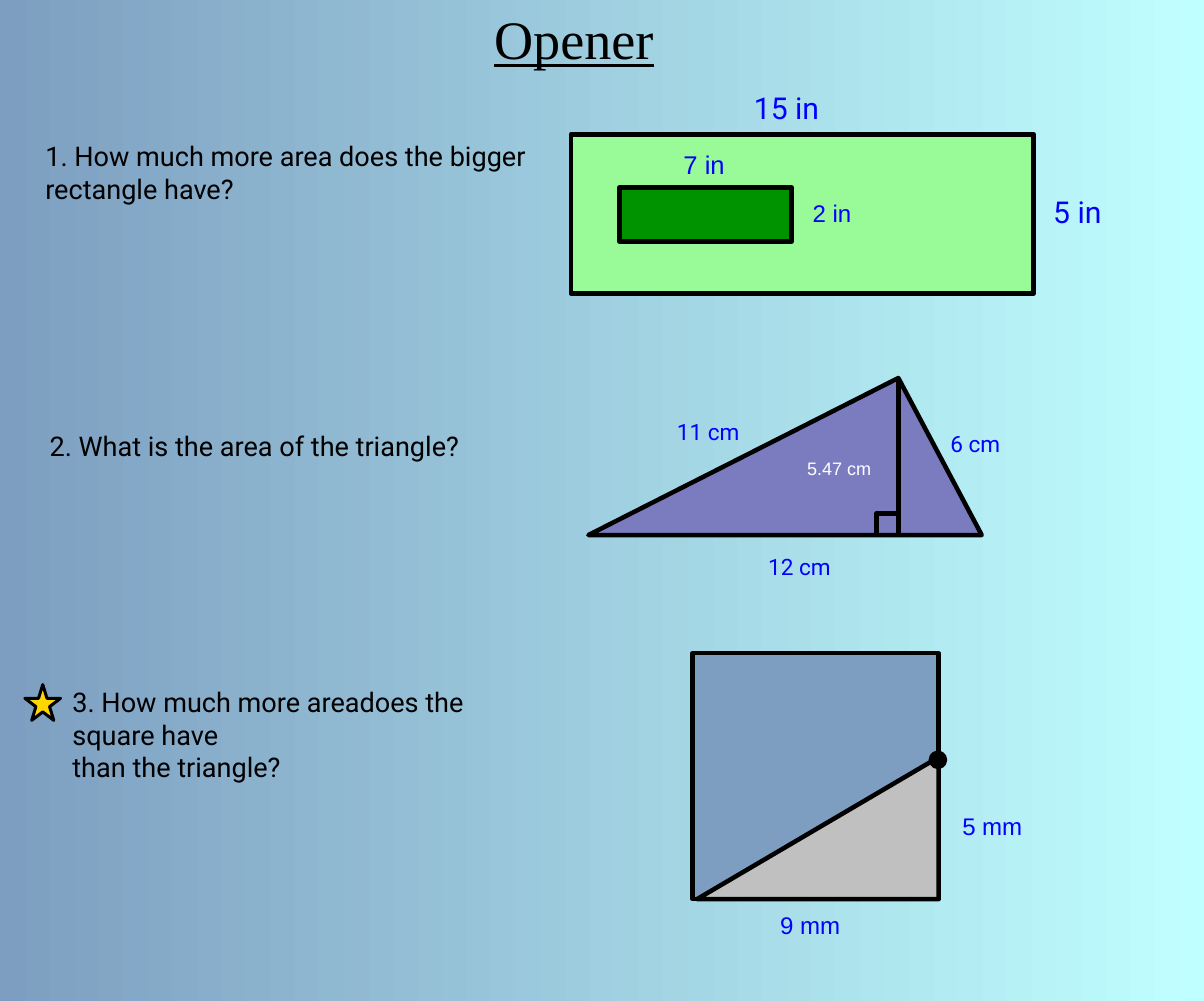
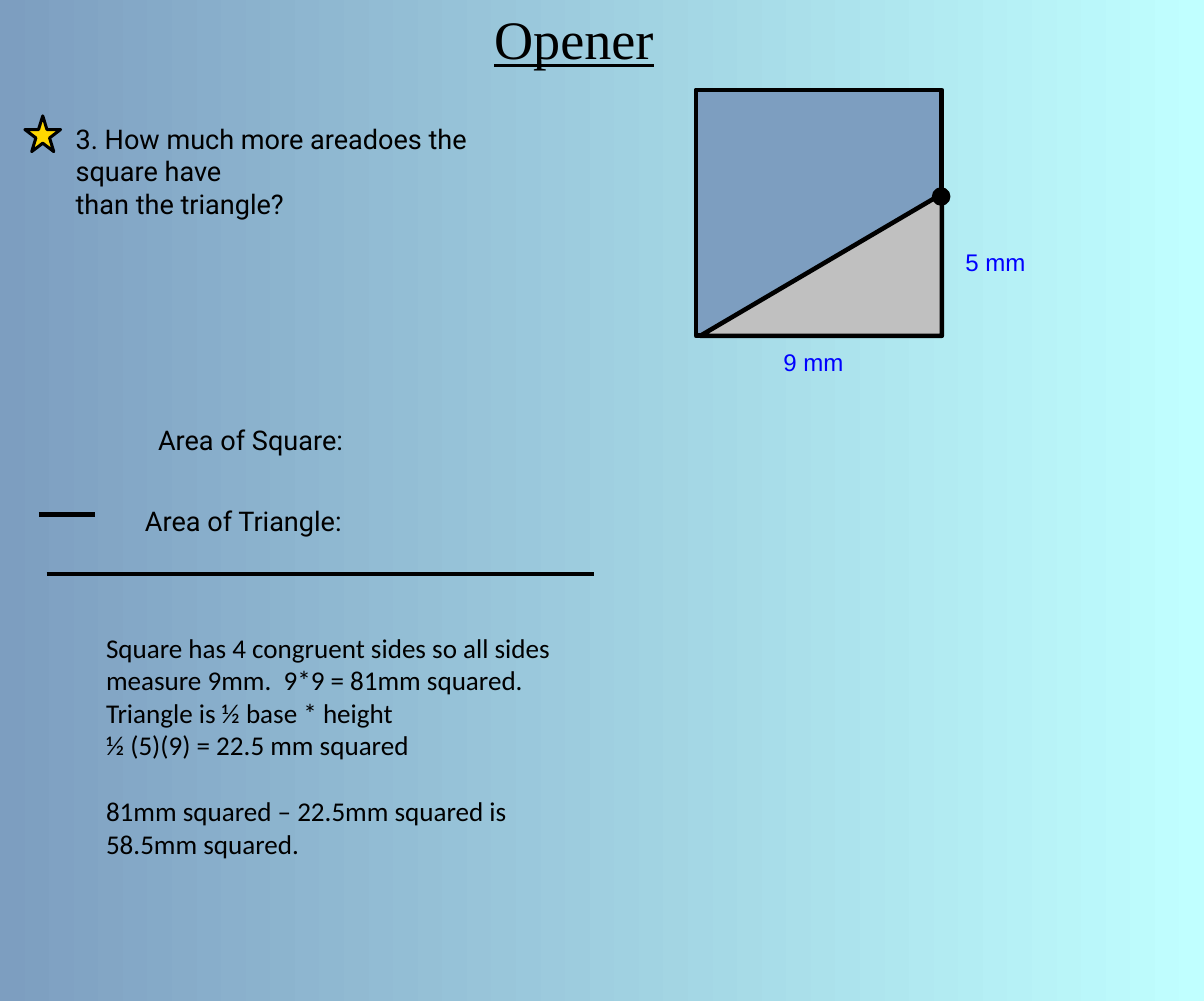
import dataclasses

import pptx
import pptx.dml.color
import pptx.enum.shapes
import pptx.enum.text
import pptx.util
from pptx.oxml.ns import qn
from lxml import etree

WIDTH, HEIGHT = 11.11, 9.24
COLORS = {
    "steel": "7D9EC0", "ice": "C0FFFF", "black": "000000", "white": "FFFFFF",
    "blue": "0000FF", "silver": "C0C0C0", "gold": "FFD700",
    "mint": "98FB98", "green": "009300", "violet": "7B7BC0",
}
TITLE = {"name": "Times New Roman", "size": 36, "color": "black", "underline": True}
QUESTION = {"name": "Roboto", "size": 18, "color": "black"}
SOLUTION = {"name": "Calibri", "size": 18, "color": "black"}
LABEL = {"name": "Arial", "size": 16, "color": "blue"}
ROBOTO_LABEL = LABEL | {"name": "Roboto"}
SHAPES = pptx.enum.shapes.MSO_SHAPE


@dataclasses.dataclass
class Box:
    """An area in inches, whose inner areas are given in percent of its size."""
    x: float
    y: float
    w: float
    h: float

    def area(self, x, y, w, h):
        return Box(self.x + self.w * x / 100, self.y + self.h * y / 100,
                   self.w * w / 100, self.h * h / 100)

    def point(self, x, y):
        p = self.area(x, y, 0, 0)
        return pptx.util.Inches(p.x), pptx.util.Inches(p.y)

    def emu(self):
        return [pptx.util.Inches(v) for v in (self.x, self.y, self.w, self.h)]


SLIDE = Box(0, 0, WIDTH, HEIGHT)


def rgb(color):
    return pptx.dml.color.RGBColor.from_string(COLORS[color])


def style_outline(line, width):
    line.color.rgb = rgb("black")
    line.width = pptx.util.Pt(width)


def style_shape(sp, fill, width=3):
    sp.shadow.inherit = False
    if fill:
        sp.fill.solid()
        sp.fill.fore_color.rgb = rgb(fill)
    else:
        sp.fill.background()
    style_outline(sp.line, width)
    etree.SubElement(sp._element.spPr.find(qn("a:ln")), qn("a:round"))


def add_preset(s, kind, box, fill, width=3):
    style_shape(s.shapes.add_shape(kind, *box.emu()), fill, width)


def add_polygon(s, box, points, fill):
    first, *rest = [box.point(*pt) for pt in points]
    builder = s.shapes.build_freeform(*first)
    builder.add_line_segments(rest, close=True)
    style_shape(builder.convert_to_shape(), fill)


def add_line(s, box, start, end):
    line = s.shapes.add_connector(pptx.enum.shapes.MSO_CONNECTOR.STRAIGHT,
                                  *box.point(*start), *box.point(*end))
    style_outline(line.line, 3)
    etree.SubElement(line._element.spPr, qn("a:effectLst"))


def write(tf, paragraphs, font):
    tf.word_wrap = True
    tf.auto_size = pptx.enum.text.MSO_AUTO_SIZE.NONE
    tf.vertical_anchor = pptx.enum.text.MSO_ANCHOR.TOP
    for i, text in enumerate(paragraphs):
        p = tf.add_paragraph() if i else tf.paragraphs[0]
        p.alignment = pptx.enum.text.PP_ALIGN.LEFT
        r = p.add_run()
        r.text = text
        for key, value in font.items():
            if key == "color":
                r.font.color.rgb = rgb(value)
            else:
                setattr(r.font, key, pptx.util.Pt(value) if key == "size" else value)


def add_text(s, box, font, *paragraphs):
    tf = s.shapes.add_textbox(*box.emu()).text_frame
    write(tf, paragraphs, font)
    return tf


def add_labels(s, box, labels):
    for text, place, font in labels:
        add_text(s, box.area(*place), font, text)


def set_background(master):
    fill = master.background.fill
    fill.gradient()
    fill.gradient_angle = 0
    for stop, color in zip(fill.gradient_stops, ("steel", "ice")):
        stop.color.rgb = rgb(color)


def add_opener(prs):
    """Add a slide with the shared title."""
    s = prs.slides.add_slide(prs.slide_layouts[5])
    title = s.shapes.title
    place = SLIDE.area(40.14, 0, 43.02, 7.68).emu()
    for key, value in zip(("left", "top", "width", "height"), place):
        setattr(title, key, value)
    write(title.text_frame, ["Opener"], TITLE)
    return s


def draw_rectangles(s, box):
    add_preset(s, SHAPES.RECTANGLE, box, "mint")
    add_preset(s, SHAPES.RECTANGLE, box.area(10.5, 33.3, 37.2, 34), "green")
    large = ROBOTO_LABEL | {"size": 20}
    add_labels(s, box, [
        ("5 in", (101.9, 34, 17.6, 30), large),
        ("15 in", (37.2, -31.3, 22.5, 30), large),
        ("2 in", (49.9, 36.7, 15, 25), LABEL),
        ("7 in", (22, 6.1, 15.2, 26.5), LABEL | {"size": 17}),
    ])


def draw_triangle(s, box):
    foot = 78.8
    add_polygon(s, box, [(foot, 0), (100, 100), (0, 100)], "violet")
    add_line(s, box, (foot, 1), (foot, 98))
    add_preset(s, SHAPES.RECTANGLE, box.area(foot - 5.5, 86.2, 5.5, 13.8), None)
    side = ROBOTO_LABEL | {"size": 15}
    add_labels(s, box, [
        ("11 cm", (19.8, 22.1, 25.1, 24), side),
        ("6 cm", (89.3, 29.7, 21.2, 24), side),
        ("12 cm", (43, 108.3, 25.9, 24), side),
        ("5.47 cm", (52.9, 46.9, 26.7, 20.7), LABEL | {"size": 12, "color": "white"}),
    ])


def draw_square(s, box):
    """Draw the square with the triangle cut from its lower corner."""
    add_preset(s, SHAPES.RECTANGLE, box, "steel")
    add_polygon(s, box, [(1.8, 100), (100, 42.3), (100, 100)], "silver")
    add_labels(s, box, [
        ("9 mm", (31.3, 102.6, 40.5, 16.3), LABEL),
        ("5 mm", (105.3, 62.1, 40.5, 16.3), LABEL),
    ])
    add_preset(s, SHAPES.OVAL, box.area(96.9, 40.5, 5.7, 5.7), "black")


def draw_star_question(s, text_at, star_at, square_at):
    """Place the starred question and its figure at the given slide shares."""
    draw_square(s, SLIDE.area(*square_at, 20.43, 24.57))
    add_text(s, SLIDE.area(*text_at, 34.29, 10.93), QUESTION,
             "3. How much more areadoes the square have", "than the triangle?")
    add_preset(s, SHAPES.STAR_5_POINT, SLIDE.area(*star_at, 2.97, 3.57), "gold", 2)


def build_questions(prs):
    s = add_opener(prs)
    add_text(s, SLIDE.area(2.88, 13.42, 42.75, 7.68), QUESTION,
             "1. How much more area does the bigger rectangle have?")
    draw_rectangles(s, SLIDE.area(47.43, 13.42, 38.43, 15.91))
    add_text(s, SLIDE.area(3.24, 42.42, 36.72, 7.68), QUESTION,
             "2. What is the area of the triangle?")
    draw_triangle(s, SLIDE.area(48.87, 37.77, 32.67, 15.69))
    draw_star_question(s, (5.13, 67.97), (2.07, 68.4), (57.52, 65.26))


def build_solution(prs):
    s = add_opener(prs)
    draw_star_question(s, (5.4, 11.69), (2.07, 11.58), (57.79, 8.98))
    add_text(s, SLIDE.area(12.24, 41.77, 23.76, 4.33), QUESTION, "Area of Square:")
    add_text(s, SLIDE.area(11.16, 49.89, 24.84, 4.33), QUESTION, "Area of Triangle:")
    for left, right, y in ((3.24, 7.92, 51.41), (3.87, 49.32, 57.36)):
        add_line(s, SLIDE, (left, y), (right, y))
    tf = add_text(s, SLIDE.area(7.92, 62.55, 42.84, 24.03), SOLUTION,
                  "Square has 4 congruent sides so all sides measure 9mm.  9*9 = 81mm squared.",
                  "Triangle is ½ base * height",
                  "½ (5)(9) = 22.5 mm squared",
                  "81mm squared – 22.5mm squared is 58.5mm squared.")
    tf.paragraphs[-1].space_before = pptx.util.Pt(22)


def main():
    prs = pptx.Presentation()
    prs.slide_width = pptx.util.Inches(WIDTH)
    prs.slide_height = pptx.util.Inches(HEIGHT)
    set_background(prs.slide_master)
    build_questions(prs)
    build_solution(prs)
    prs.save("out.pptx")


if __name__ == "__main__":
    main()
